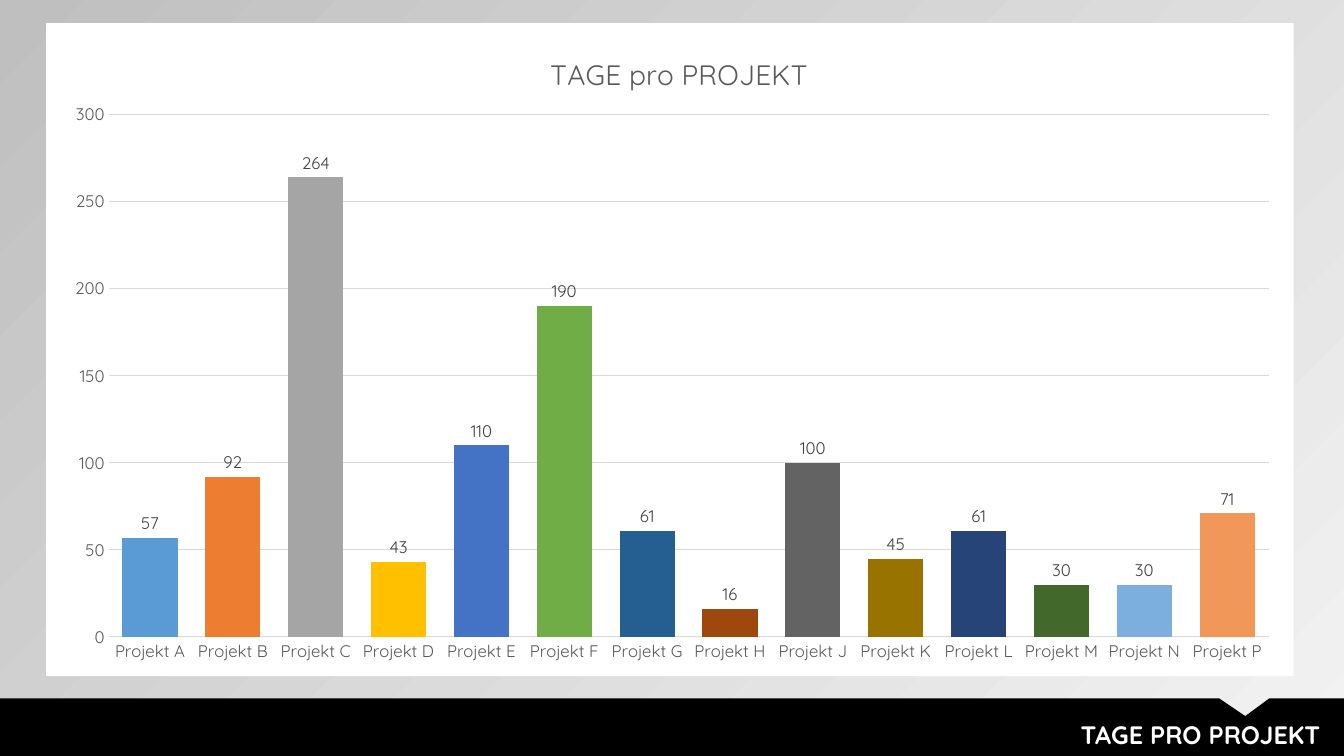
from lxml import etree
from pptx import Presentation
from pptx.chart.data import CategoryChartData
from pptx.dml.color import RGBColor
from pptx.enum.chart import XL_CHART_TYPE, XL_LABEL_POSITION, XL_TICK_MARK
from pptx.enum.text import MSO_ANCHOR, MSO_AUTO_SIZE, PP_ALIGN
from pptx.oxml import parse_xml
from pptx.oxml.ns import nsdecls, qn
from pptx.util import Pt

PX = 9525
FONT = "Quicksand"
TITLE_ONLY = 5
COLUMNS = XL_CHART_TYPE.COLUMN_CLUSTERED
ABOVE = XL_LABEL_POSITION.OUTSIDE_END
NO_TICK = XL_TICK_MARK.NONE
RIGHT = PP_ALIGN.RIGHT
MIDDLE = MSO_ANCHOR.MIDDLE
FIT_SHAPE = MSO_AUTO_SIZE.SHAPE_TO_FIT_TEXT

COLORS = {
    "light": "F2F2F2", "shade": "BFBFBF", "black": "000000",
    "white": "FFFFFF", "axis": "595959", "label": "404040", "grid": "D9D9D9",
}
PROJECTS = [
    ("A", 57, "5B9BD5"), ("B", 92, "ED7D31"), ("C", 264, "A5A5A5"),
    ("D", 43, "FFC000"), ("E", 110, "4472C4"), ("F", 190, "70AD47"),
    ("G", 61, "255E91"), ("H", 16, "9E480E"), ("J", 100, "636363"),
    ("K", 45, "997300"), ("L", 61, "264478"), ("M", 30, "43682B"),
    ("N", 30, "7CAFDD"), ("P", 71, "F1975A"),
]


def px(*values):
    return [v * PX for v in values]


def rgb(name):
    return RGBColor.from_string(COLORS[name])


def style_font(font, size, color, bold=False):
    font.name = FONT
    font.size = Pt(size)
    font.bold = bold
    font.color.rgb = rgb(color)


def style_line(line):
    line.color.rgb = rgb("grid")
    line.width = Pt(0.75)


def set_background(s):
    fill = s.background.fill
    fill.gradient()
    fill.gradient_angle = 135
    for stop, name in zip(fill.gradient_stops, ("light", "shade")):
        stop.color.rgb = rgb(name)


def add_footer_band(s):
    points = [(0, 665), (1161, 665), (1186, 682), (1209, 665),
              (1280, 665), (1280, 720), (0, 720)]
    builder = s.shapes.build_freeform(*points[0], scale=PX)
    builder.add_line_segments(points[1:], close=True)
    sp = builder.convert_to_shape()
    sp.shadow.inherit = False
    sp.fill.solid()
    sp.fill.fore_color.rgb = rgb("black")
    sp.line.fill.background()
    s.shapes._spTree.insert(2, sp._element)


def set_title(s, text):
    sp = s.shapes.title
    sp.left, sp.top, sp.width, sp.height = px(397, 680, 870, 38)
    tf = sp.text_frame
    tf.text = text
    tf.word_wrap = True
    tf.auto_size = FIT_SHAPE
    tf.vertical_anchor = MIDDLE
    p = tf.paragraphs[0]
    p.alignment = RIGHT
    style_font(p.runs[0].font, 18, "white", True)


def place(parent, index, target=None, **values):
    for old in parent.findall(qn("c:layout")):
        parent.remove(old)
    layout = parse_xml(f"<c:layout {nsdecls('c')}><c:manualLayout/></c:layout>")
    if target:
        etree.SubElement(layout[0], qn("c:layoutTarget")).set("val", target)
    for axis in "xy":
        etree.SubElement(layout[0], qn(f"c:{axis}Mode")).set("val", "edge")
    for key, value in values.items():
        etree.SubElement(layout[0], qn(f"c:{key}")).set("val", str(value))
    parent.insert(index, layout)


def fill_chart(chart):
    sp_pr = parse_xml(
        f"<c:spPr {nsdecls('c', 'a')}><a:solidFill>"
        f"<a:srgbClr val=\"{COLORS['white']}\"/></a:solidFill>"
        "<a:ln><a:noFill/></a:ln></c:spPr>")
    chart.element.find(qn("c:chart")).addnext(sp_pr)


def style_axes(chart):
    for axis in (chart.category_axis, chart.value_axis):
        axis.major_tick_mark = axis.minor_tick_mark = NO_TICK
        style_font(axis.tick_labels.font, 12, "axis")
    style_line(chart.category_axis.format.line)
    axis = chart.value_axis
    axis.format.line.fill.background()
    axis.minimum_scale, axis.maximum_scale, axis.major_unit = 0, 300, 50
    style_line(axis.major_gridlines.format.line)


def style_columns(plot):
    plot.gap_width = 50
    plot.vary_by_categories = True
    series = plot.series[0]
    for i, (_, _, color) in enumerate(PROJECTS):
        fill = series.points[i].format.fill
        fill.solid()
        fill.fore_color.rgb = RGBColor.from_string(color)
    labels = series.data_labels
    labels.show_value = True
    labels.position = ABOVE
    style_font(labels.font, 12, "label")


def add_days_chart(s):
    data = CategoryChartData()
    data.categories = [f"Projekt {letter}" for letter, _, _ in PROJECTS]
    data.add_series("Series 1", [days for _, days, _ in PROJECTS])
    chart = s.shapes.add_chart(COLUMNS, *px(44, 22, 1188, 622), data).chart
    style_font(chart.font, 10, "black")
    chart.has_legend = False
    chart.has_title = True
    title = chart.chart_title
    title.text_frame.text = "TAGE pro PROJEKT"
    style_font(title.text_frame.paragraphs[0].runs[0].font, 20, "axis")
    title.include_in_layout = False
    place(title._element, 1, x=0.4, y=0.04)
    place(chart.element.find(".//" + qn("c:plotArea")), 0, "inner",
          x=0.05, y=0.14, w=0.93, h=0.8)
    fill_chart(chart)
    style_axes(chart)
    style_columns(chart.plots[0])


def main():
    prs = Presentation()
    prs.slide_width, prs.slide_height = px(1280, 720)
    s = prs.slides.add_slide(prs.slide_layouts[TITLE_ONLY])
    set_background(s)
    add_footer_band(s)
    set_title(s, "TAGE PRO PROJEKT")
    add_days_chart(s)
    prs.save("out.pptx")


if __name__ == "__main__":
    main()
